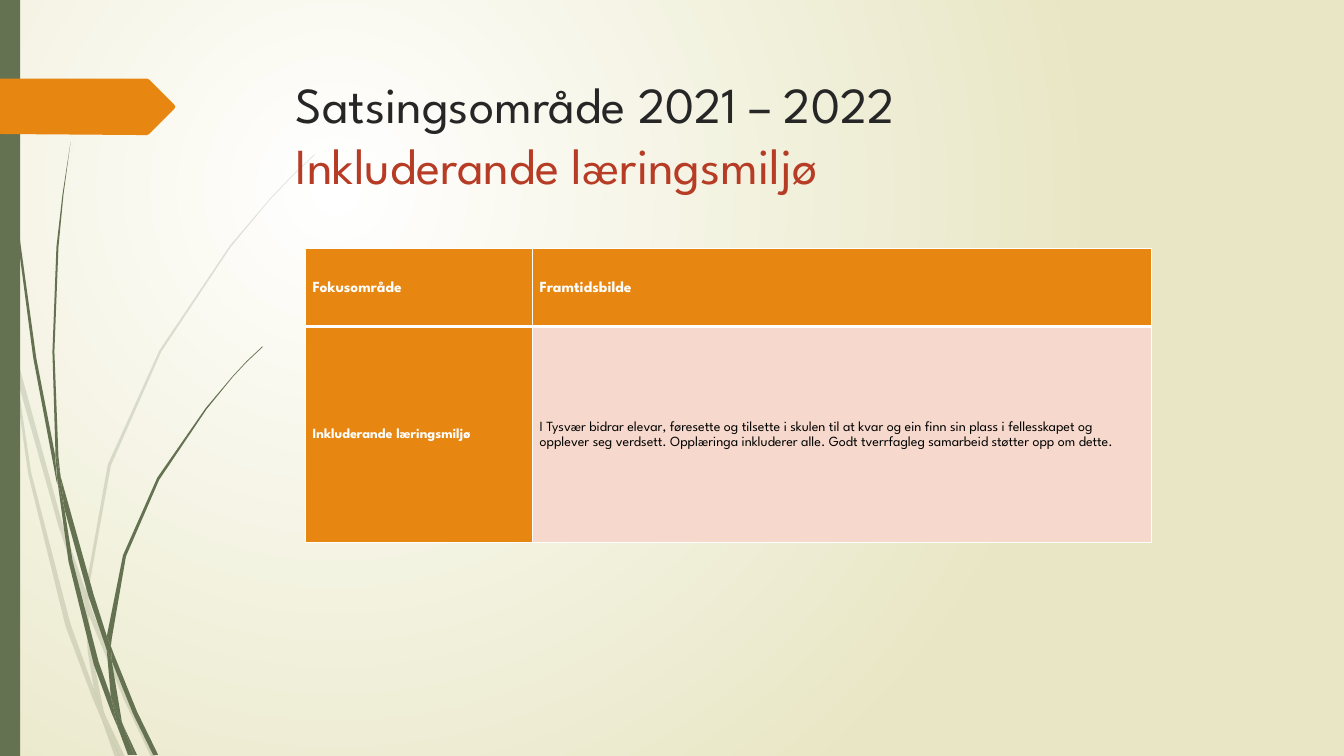
from lxml import etree
from pptx import Presentation, util as u
from pptx.dml.color import RGBColor
from pptx.enum import shapes, text
from pptx.oxml import ns

COLORS = {"moss": "647252", "orange": "E78712", "rust": "B73C26", "ink": "262626",
          "black": "000000", "white": "FFFFFF", "blush": "F6D9CC", "sand": "E8E6C4"}
HUNDREDTH_INCH = u.Cm(0.0254)

PALE_BLADES = [
    [(11, 350), (9, 322), (0, 282), (0, 299), (10, 344)],
    [(58, 522), (84, 599), (85, 586), (62, 520), (14, 345), (17, 376)],
    [(92, 607), (88, 596), (88, 610), (123, 694), (150, 751), (155, 751), (127, 692)],
    [(119, 751), (124, 751), (105, 711)],
    [(93, 683), (70, 619), (31, 469), (17, 376), (11, 350), (28, 470), (65, 621), (92, 693),
     (101, 714), (99, 707)],
    [(84, 599), (87, 646), (93, 683), (96, 692), (105, 711), (103, 706), (91, 646), (88, 610),
     (88, 608)],
    [(88, 584), (110, 462), (160, 349), (229, 245), (268, 198), (290, 175), (312, 154), (312, 153),
     (289, 175), (268, 197), (228, 244), (158, 348), (107, 461), (85, 584), (85, 586), (88, 596)],
    [(101, 714), (114, 751), (119, 751)],
    [(88, 608), (88, 610), (88, 596), (85, 586), (84, 599)],
    [(96, 692), (93, 683), (99, 707), (101, 714), (119, 751), (105, 711)],
]
DARK_BLADES = [
    [(7, 110), (17, 233), (33, 355), (56, 477), (57, 481), (55, 457), (55, 453), (36, 355),
     (19, 232), (8, 109), (5, 48), (4, 0), (3, 0), (4, 48)],
    [(88, 592), (106, 645), (106, 633), (106, 631), (93, 590), (60, 472), (64, 505)],
    [(113, 649), (110, 641), (111, 656), (132, 708), (152, 749), (157, 749), (136, 706)],
    [(110, 691), (98, 657), (72, 556), (64, 505), (57, 477), (68, 557), (93, 659), (111, 708),
     (117, 722), (116, 717)],
    [(60, 472), (58, 453), (54, 349), (58, 245), (63, 193), (70, 141), (62, 193), (56, 245),
     (52, 349), (55, 449)],
    [(133, 749), (136, 749), (122, 719)],
    [(57, 477), (64, 505), (60, 472), (55, 449), (55, 453)],
    [(111, 633), (125, 552), (158, 476), (205, 406), (231, 374), (245, 359), (261, 344), (260, 344),
     (245, 358), (231, 373), (204, 405), (156, 474), (122, 551), (106, 631), (110, 641)],
    [(117, 722), (127, 749), (131, 749)],
    [(106, 645), (110, 691), (116, 706), (122, 719), (121, 716), (111, 656), (109, 651)],
    [(106, 645), (109, 651), (111, 656), (110, 641), (106, 631), (106, 633)],
    [(116, 706), (110, 691), (116, 717), (117, 722), (130, 749), (133, 749), (122, 719)],
]
PAGE_TAB = [(0, 78), (146, 78), (148, 79), (173, 104), (174, 106), (173, 108), (148, 133),
            (146, 134), (136, 134), (0, 133)]
TITLE = [("Satsingsområde 2021 – 2022", "ink"), ("Inkluderande læringsmiljø", "rust")]
FOCUS_ROWS = [
    ["Fokusområde", "Framtidsbilde"],
    ["Inkluderande læringsmiljø",
     "I\u00a0Tysvær bidrar elevar, føresette og tilsette i skulen til at kvar og ein finn sin plass i "
     "fellesskapet og opplever seg verdsett. Opplæringa inkluderer alle. "
     "Godt tverrfagleg samarbeid støtter opp om dette."],
]


class FocusSlide:
    """Holds the slide and its style, with one method per kind of element."""

    font = "League Spartan"

    def __init__(self, deck):
        self.slide = deck.slides.add_slide(deck.slide_layouts[6])

    def rgb(self, name):
        return RGBColor.from_string(COLORS[name])

    def apply(self, target, **formats):
        for key, value in formats.items():
            setattr(target, key, value)

    def backdrop(self, center, edge):
        fill = self.slide.background.fill
        fill.gradient()
        for stop, position, name in zip(fill.gradient_stops, (0, 1), (center, edge)):
            stop.position = position
            stop.color.rgb = self.rgb(name)
        gradient = self.slide.element.find(".//" + ns.qn("a:gradFill"))
        gradient.remove(gradient.find(ns.qn("a:lin")))
        glow = etree.SubElement(gradient, ns.qn("a:path"), {"path": "circle"})
        etree.SubElement(glow, ns.qn("a:fillToRect"), l="50000", t="50000", r="100000", b="100000")

    def paint(self, shape, color, opacity=100):
        shape.shadow.inherit = False
        shape.line.fill.background()
        shape.fill.solid()
        shape.fill.fore_color.rgb = self.rgb(color)
        if opacity < 100:
            tint = shape.element.spPr.find(".//" + ns.qn("a:srgbClr"))
            etree.SubElement(tint, ns.qn("a:alpha"), val=str(opacity * 1000))

    def outline(self, points, color, opacity=100):
        pen = self.slide.shapes.build_freeform(*points[0], scale=HUNDREDTH_INCH)
        pen.add_line_segments(points[1:], close=True)
        self.paint(pen.convert_to_shape(), color, opacity)

    def bar(self, box, color):
        kind = shapes.MSO_SHAPE.RECTANGLE
        self.paint(self.slide.shapes.add_shape(kind, *map(u.Cm, box)), color)

    def wording(self, paragraph, words, size, color, bold=False):
        run = paragraph.add_run()
        run.text = words
        self.apply(run.font, name=self.font, size=u.Pt(size), bold=bold)
        run.font.color.rgb = self.rgb(color)

    def title(self, box, lines, size):
        frame = self.slide.shapes.add_textbox(*map(u.Cm, box)).text_frame
        self.apply(frame, word_wrap=True, vertical_anchor=text.MSO_ANCHOR.TOP)
        heading = frame.paragraphs[0]
        for index, (words, color) in enumerate(lines):
            if index:
                heading.add_line_break()
            self.wording(heading, words, size, color)

    def borders(self, cell, widths):
        properties = cell._tc.get_or_add_tcPr()
        for index, (side, width) in enumerate(widths.items()):
            edge = etree.Element(ns.qn("a:ln" + side), w=str(u.Pt(width)))
            solid = etree.SubElement(edge, ns.qn("a:solidFill"))
            etree.SubElement(solid, ns.qn("a:srgbClr"), val=COLORS["white"])
            properties.insert(index, edge)

    def table(self, box, rows, widths, heights):
        grid = self.slide.shapes.add_table(len(rows), len(widths), *map(u.Cm, box)).table
        for column, width in zip(grid.columns, widths):
            column.width = u.Cm(width)
        for row, height in zip(grid.rows, heights):
            row.height = u.Cm(height)
        for r, row in enumerate(rows):
            for c, words in enumerate(row):
                cell, label = grid.cell(r, c), r == 0 or c == 0
                self.apply(cell, vertical_anchor=text.MSO_ANCHOR.MIDDLE, margin_left=u.Cm(0.18),
                           margin_right=u.Cm(0.18), margin_top=0, margin_bottom=0)
                cell.fill.solid()
                cell.fill.fore_color.rgb = self.rgb("orange" if label else "blush")
                paragraph = cell.text_frame.paragraphs[0]
                paragraph.line_spacing = 1.15
                self.wording(paragraph, words, 10 if r else 11, "white" if label else "black", label)
                self.borders(cell, {"L": 1, "R": 1, "T": 3 if r else 1, "B": 1 if r else 3})


def main():
    deck = Presentation()
    deck.slide_width, deck.slide_height = u.Cm(33.87), u.Cm(19.05)
    page = FocusSlide(deck)
    page.backdrop("white", "sand")
    for blades, opacity in ((PALE_BLADES, 20), (DARK_BLADES, 100)):
        for blade in blades:
            page.outline(blade, "moss", opacity)
    page.bar((0, 0, 0.51, 19.05), "moss")
    page.outline(PAGE_TAB, "orange")
    page.title((7.21, 1.73, 24.77, 3.56), TITLE, 36)
    page.table((7.7, 6.27, 21.31, 7.39), FOCUS_ROWS, (5.72, 15.6), (1.96, 5.44))
    deck.save("out.pptx")


if __name__ == "__main__":
    main()
